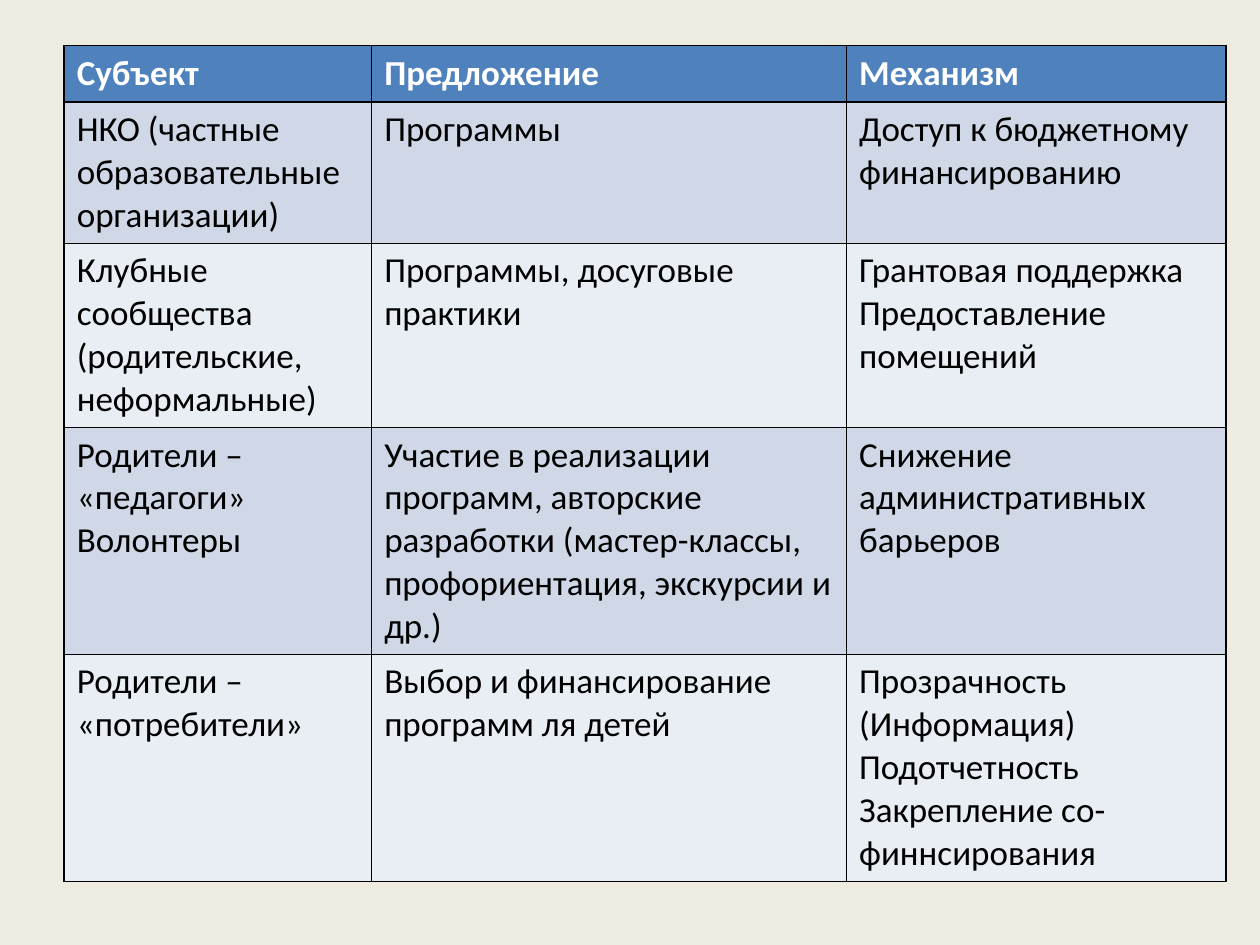
import dataclasses

import pptx
import pptx.dml.color
import pptx.oxml
import pptx.oxml.ns
import pptx.util


@dataclasses.dataclass(frozen=True)
class Theme:
    """Colours, type and line widths of the slide."""

    background: str = "EEECE1"
    header_fill: str = "4F81BD"
    band_fills: tuple = ("D0D8E8", "E9EDF4")
    header_text: str = "FFFFFF"
    body_text: str = "000000"
    border: str = "000000"
    border_points: float = 1
    font: str = "Calibri"
    text_points: int = 20


THEME = Theme()
SLIDE_WIDTH = pptx.util.Inches(10)
SLIDE_HEIGHT = pptx.util.Inches(7.5)
TABLE_BOX = (0.51, 0.36, 9.22, 5.09)
COLUMN_WEIGHTS = (2.44, 3.77, 3.01)
ROW_WEIGHTS = (0.45, 1.01, 1.01, 1.31, 1.31)
PROPOSALS = (
    ("Субъект", "Предложение", "Механизм"),
    (
        "НКО (частные образовательные организации)",
        "Программы",
        "Доступ к бюджетному финансированию",
    ),
    (
        "Клубные сообщества (родительские, неформальные)",
        "Программы, досуговые практики",
        "Грантовая поддержка\nПредоставление помещений",
    ),
    (
        "Родители – «педагоги»\nВолонтеры",
        "Участие в реализации программ, авторские разработки "
        "(мастер-классы, профориентация, экскурсии и др.)",
        "Снижение административных барьеров",
    ),
    (
        "Родители – «потребители»",
        "Выбор и финансирование программ ля детей",
        "Прозрачность (Информация)\nПодотчетность\nЗакрепление со-финнсирования",
    ),
)


def rgb(value):
    """Return the colour object for a hex value."""
    return pptx.dml.color.RGBColor.from_string(value)


def add_borders(cell):
    """Draw a solid line on all four sides of a cell."""
    properties = cell._tc.get_or_add_tcPr()
    width = pptx.util.Pt(THEME.border_points)
    for index, side in enumerate(("lnL", "lnR", "lnT", "lnB")):
        line = pptx.oxml.parse_xml(
            f'<a:{side} {pptx.oxml.ns.nsdecls("a")} w="{width}"><a:solidFill>'
            f'<a:srgbClr val="{THEME.border}"/></a:solidFill></a:{side}>'
        )
        properties.insert(index, line)


def fill_cell(cell, wording, fill, colour, bold):
    """Write and format one table cell."""
    cell.text_frame.text = wording
    for paragraph in cell.text_frame.paragraphs:
        for run in paragraph.runs:
            run.font.name = THEME.font
            run.font.size = pptx.util.Pt(THEME.text_points)
            run.font.bold = bold
            run.font.color.rgb = rgb(colour)
    cell.fill.solid()
    cell.fill.fore_color.rgb = rgb(fill)
    add_borders(cell)


def add_proposals_table(slide, box):
    """Place the table of subjects, proposals and mechanisms in a box."""
    left, top, width, height = (pptx.util.Inches(length) for length in box)
    table = slide.shapes.add_table(
        len(ROW_WEIGHTS), len(COLUMN_WEIGHTS), left, top, width, height
    ).table
    for column, weight in zip(table.columns, COLUMN_WEIGHTS):
        column.width = int(width * weight / sum(COLUMN_WEIGHTS))
    for row, weight in zip(table.rows, ROW_WEIGHTS):
        row.height = int(height * weight / sum(ROW_WEIGHTS))
    for row_index, wordings in enumerate(PROPOSALS):
        header = row_index == 0
        fill = THEME.header_fill if header else THEME.band_fills[(row_index - 1) % 2]
        colour = THEME.header_text if header else THEME.body_text
        for column_index, wording in enumerate(wordings):
            cell = table.cell(row_index, column_index)
            fill_cell(cell, wording, fill, colour, header)


def main():
    """Build and save the slide."""
    presentation = pptx.Presentation()
    presentation.slide_width = SLIDE_WIDTH
    presentation.slide_height = SLIDE_HEIGHT
    slide = presentation.slides.add_slide(presentation.slide_layouts[6])
    slide.background.fill.solid()
    slide.background.fill.fore_color.rgb = rgb(THEME.background)
    add_proposals_table(slide, TABLE_BOX)
    presentation.save("out.pptx")


if __name__ == "__main__":
    main()
